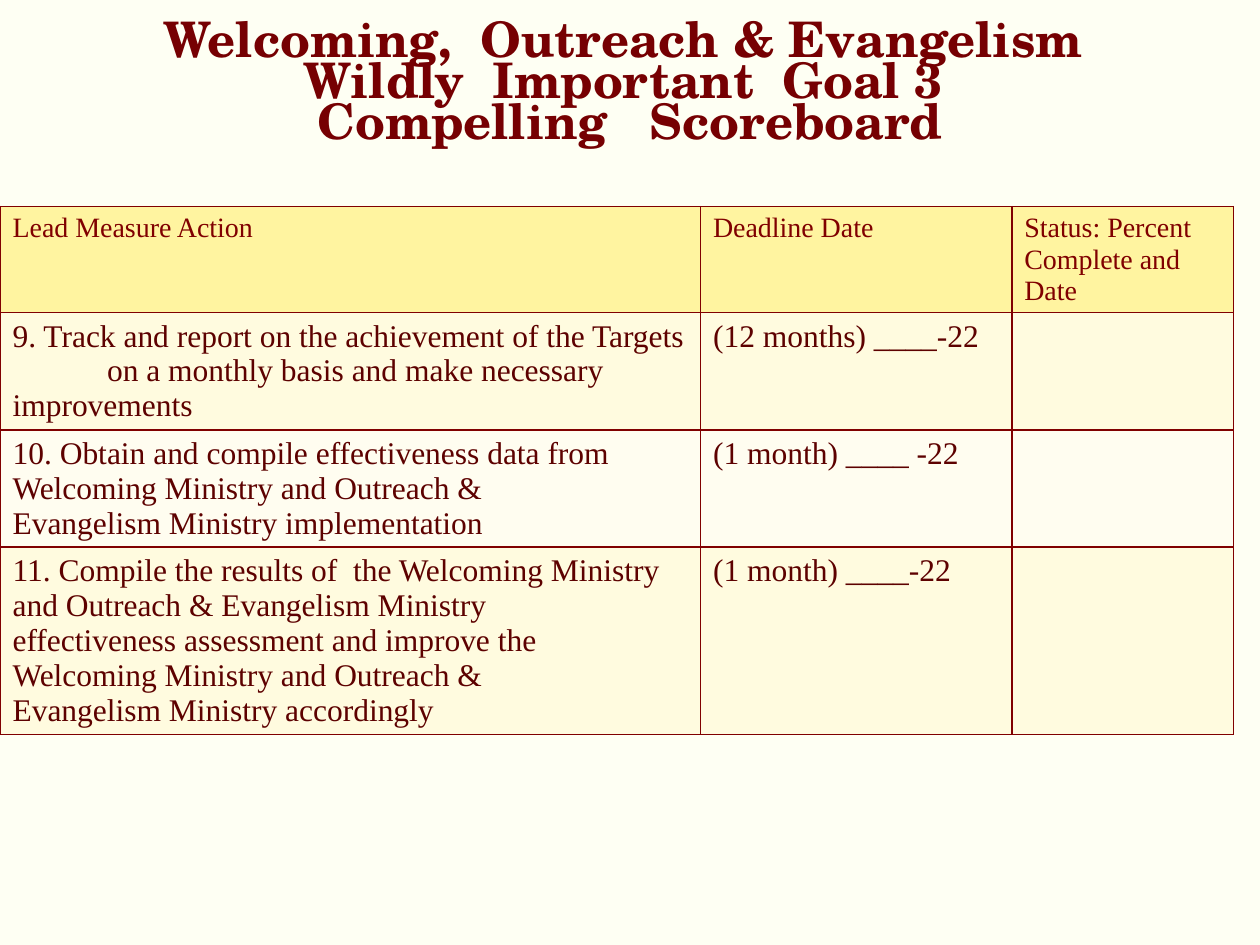
"""Build the goal 3 scoreboard slide with a title and a lead measure table."""
import pptx
import pptx.util
import pptx.dml.color
import pptx.enum.text
import pptx.oxml
import pptx.oxml.ns
from lxml import etree

Pt = pptx.util.Pt
RGBColor = pptx.dml.color.RGBColor

BACKGROUND = RGBColor(0xFE, 0xFF, 0xF3)
TITLE = RGBColor(0x76, 0x00, 0x02)
MAROON = RGBColor(0x80, 0x00, 0x00)
BODY = RGBColor(0x5D, 0x01, 0x00)
HEADER_FILL = RGBColor(0xFF, 0xF4, 0xA0)
ODD_FILL = RGBColor(0xFF, 0xFB, 0xDF)
EVEN_FILL = RGBColor(0xFF, 0xFD, 0xF0)

COLUMN_WIDTHS = [400.3, 177.9, 126.7]
ROWS = [
    (60.5, HEADER_FILL, ["Lead Measure Action", "Deadline Date",
                         "Status: Percent Complete and Date"]),
    (67, ODD_FILL, ["9. Track and report on the achievement of the Targets\v"
                    "\ton a monthly basis and make necessary improvements",
                    "(12 months) ____-22", ""]),
    (67, EVEN_FILL, ["10. Obtain and compile effectiveness data from\v"
                     "Welcoming Ministry and Outreach &\v"
                     "Evangelism Ministry implementation",
                     "(1 month) ____ -22", ""]),
    (107, ODD_FILL, ["11. Compile the results of  the Welcoming Ministry\v"
                     "and Outreach & Evangelism Ministry\v"
                     "effectiveness assessment and improve the\v"
                     "Welcoming Ministry and Outreach &\v"
                     "Evangelism Ministry accordingly",
                     "(1 month) ____-22", ""]),
]


def set_borders(cell, color, width):
    tcPr = cell._tc.get_or_add_tcPr()
    for i, side in enumerate(("lnL", "lnR", "lnT", "lnB")):
        ln = etree.Element(pptx.oxml.ns.qn(f"a:{side}"), w=str(int(width)))
        fill = etree.SubElement(ln, pptx.oxml.ns.qn("a:solidFill"))
        etree.SubElement(fill, pptx.oxml.ns.qn("a:srgbClr"), val=str(color))
        tcPr.insert(i, ln)


prs = pptx.Presentation()
prs.slide_width, prs.slide_height = Pt(720), Pt(540)
s = prs.slides.add_slide(prs.slide_layouts[5])
s.background.fill.solid()
s.background.fill.fore_color.rgb = BACKGROUND

title = s.shapes.title
title.left, title.top, title.width, title.height = Pt(77), Pt(4.3), Pt(566), Pt(90)
tf = title.text_frame
tf.word_wrap = True
tf.auto_size = pptx.enum.text.MSO_AUTO_SIZE.NONE
tf.vertical_anchor = pptx.enum.text.MSO_ANCHOR.MIDDLE
tf.text = ("Welcoming,  Outreach & Evangelism \v"
           "Wildly  Important  Goal 3 \vCompelling   Scoreboard")
p = tf.paragraphs[0]
p.alignment = pptx.enum.text.PP_ALIGN.CENTER
p.line_spacing = 0.7
p.font.name = "TeX Gyre Schola"
p.font.size = Pt(28)
p.font.bold = True
p.font.color.rgb = TITLE

table = s.shapes.add_table(len(ROWS), len(COLUMN_WIDTHS), Pt(0), Pt(118.1),
                           Pt(sum(COLUMN_WIDTHS)),
                           Pt(sum(row[0] for row in ROWS))).table
table.first_row = False
table.horz_banding = False
for column, width in zip(table.columns, COLUMN_WIDTHS):
    column.width = Pt(width)

for i, (height, fill, texts) in enumerate(ROWS):
    table.rows[i].height = Pt(height)
    for j, text in enumerate(texts):
        cell = table.cell(i, j)
        cell.fill.solid()
        cell.fill.fore_color.rgb = fill
        set_borders(cell, MAROON, Pt(1))
        cell.text = text
        p = cell.text_frame.paragraphs[0]
        if "\t" in text:
            tabs = etree.SubElement(p._p.get_or_add_pPr(), pptx.oxml.ns.qn("a:tabLst"))
            etree.SubElement(tabs, pptx.oxml.ns.qn("a:tab"), pos=str(int(Pt(54))), algn="l")
        p.font.name = "Times New Roman"
        p.font.size = Pt(18 if i else 16)
        p.font.color.rgb = BODY if i else MAROON

prs.save("out.pptx")
